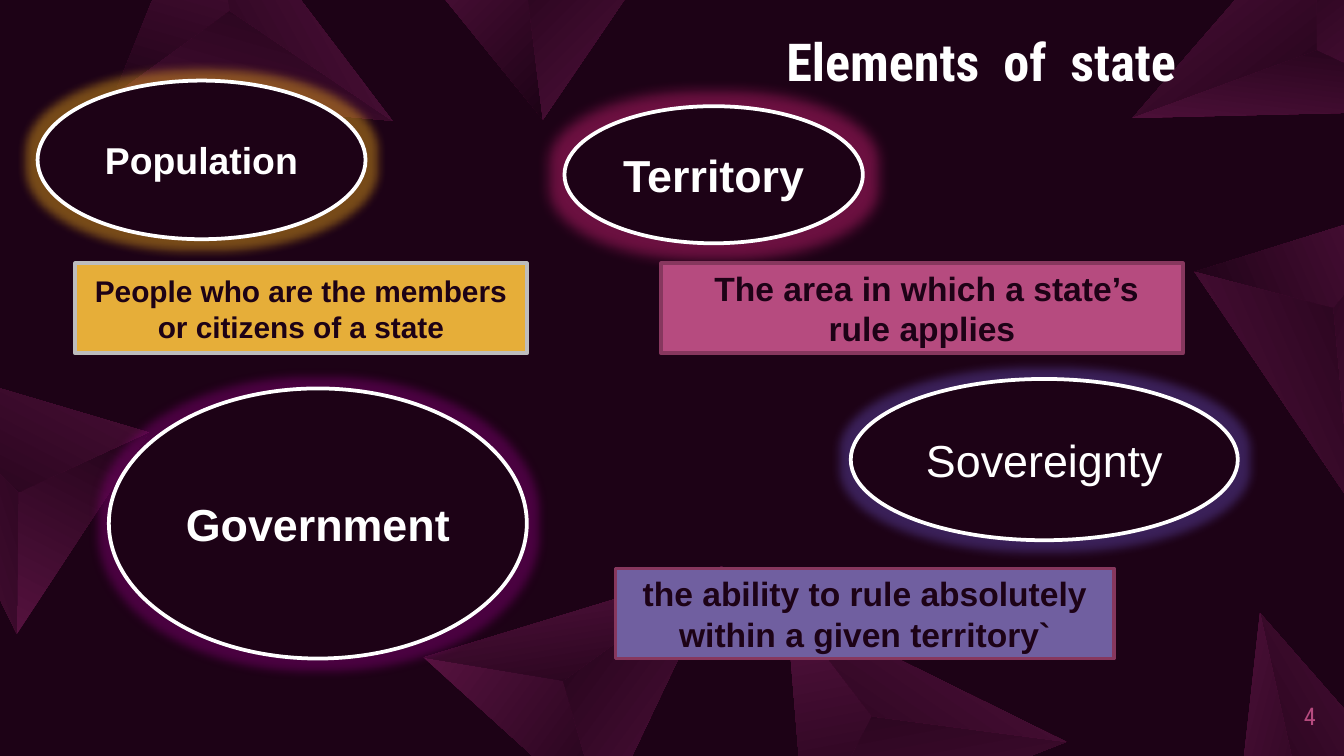
from math import cos, radians, sin

from lxml.etree import SubElement
from pptx import Presentation
from pptx.dml.color import RGBColor
from pptx.enum.shapes import MSO_SHAPE as Preset
from pptx.enum.text import MSO_ANCHOR as Anchor, PP_ALIGN as Align
from pptx.oxml.ns import qn
from pptx.util import Inches, Pt

DARK = RGBColor(0x1D, 0x02, 0x16)
PLUM = RGBColor(0x59, 0x13, 0x41)
WHITE = RGBColor(0xFF, 0xFF, 0xFF)
GOLD = RGBColor(0xE6, 0xAE, 0x39)
SILVER = RGBColor(0xBD, 0xBD, 0xBD)
PINK = RGBColor(0xB6, 0x4B, 0x7F)
WINE = RGBColor(0x87, 0x37, 0x5E)
VIOLET = RGBColor(0x70, 0x5F, 0xA0)
GOLD_GLOW = RGBColor(0xFF, 0xB8, 0x1C)
PINK_GLOW = RGBColor(0xE1, 0x25, 0x7F)
VIOLET_GLOW = RGBColor(0x66, 0x4D, 0xBB)
PURPLE_GLOW = RGBColor(0x8E, 0x00, 0x80)

BODY_FONT = "Arial"
TITLE_FONT = "Roboto Condensed"

CRYSTAL_WIDTH, CRYSTAL_HEIGHT = 2.3, 1.72
LEFT, BOTTOM, RIGHT, MIDDLE = (0, 0.33), (1.13, 1.72), (2.3, 0), (1, 0.66)
FACETS = {
    "left": ((LEFT, BOTTOM, MIDDLE), 315),
    "right": ((BOTTOM, RIGHT, MIDDLE), 135),
    "top": ((LEFT, MIDDLE, RIGHT), 270),
}
CRYSTALS = [
    (9.92, 5.89, 284.5, ("right", "top")),
    (4.06, 0.03, 0, ("left", "right")),
    (9.67, 0.16, 186.8, FACETS),
    (9.68, 2.36, 111.7, FACETS),
    (4.37, 5.24, 351.2, FACETS),
    (0.28, 3.46, 252.3, FACETS),
    (1.61, 0.31, 61, FACETS),
    (6.5, 5.58, 34.4, FACETS),
]
ELLIPSES = [
    ("Population", (0.28, 0.6, 2.44, 1.18), 20, True, GOLD_GLOW, 10),
    ("Territory", (4.2, 0.79, 2.22, 1.02), 24, True, PINK_GLOW, 14),
    ("Sovereignty", (6.33, 2.82, 2.88, 1.2), 24, False, VIOLET_GLOW, 10),
    ("Government", (0.81, 2.89, 3.11, 2.01), 24, True, PURPLE_GLOW, 10),
]
DEFINITIONS = [
    ("People who are the members or citizens of a state",
     (0.56, 1.96, 3.36, 0.67), 16, GOLD, SILVER),
    (" The area in which a state’s rule applies",
     (4.92, 1.96, 3.88, 0.67), 18, PINK, WINE),
    ("the ability to rule absolutely within a given territory`",
     (4.58, 4.23, 3.71, 0.67), 18, VIOLET, WINE),
]


def place(shape, box):
    """Move and size a shape to a box given in inches."""
    shape.left, shape.top, shape.width, shape.height = map(Inches, box)


def write(shape, text, size, color, font=BODY_FONT, bold=False,
          align=Align.CENTER, anchor=Anchor.MIDDLE):
    """Write one formatted paragraph and return it."""
    frame = shape.text_frame
    frame.word_wrap = True
    frame.vertical_anchor = anchor
    paragraph = frame.paragraphs[0]
    paragraph.text = text
    paragraph.alignment = align
    paragraph.font.name = font
    paragraph.font.size = Pt(size)
    paragraph.font.bold = bold
    paragraph.font.color.rgb = color
    return paragraph


def clear_insets(frame):
    """Remove the inner margins of a text frame."""
    frame.margin_left = frame.margin_right = 0
    frame.margin_top = frame.margin_bottom = 0


def add_crystal(slide, center_x, center_y, rotation, facet_names):
    """Draw the facets of a crystal turned about its centre."""
    turn = radians(rotation)
    for name in facet_names:
        corners, gradient_angle = FACETS[name]
        points = [(Inches(x), Inches(y)) for x, y in corners]
        builder = slide.shapes.build_freeform(*points[0])
        builder.add_line_segments(points[1:], close=True)
        facet = builder.convert_to_shape()
        facet.shadow.inherit = False
        offset_x = (facet.left + facet.width / 2) / Inches(1) - CRYSTAL_WIDTH / 2
        offset_y = (facet.top + facet.height / 2) / Inches(1) - CRYSTAL_HEIGHT / 2
        middle_x = center_x + offset_x * cos(turn) - offset_y * sin(turn)
        middle_y = center_y + offset_x * sin(turn) + offset_y * cos(turn)
        facet.left = Inches(middle_x) - facet.width // 2
        facet.top = Inches(middle_y) - facet.height // 2
        facet.rotation = rotation
        facet.line.fill.background()
        facet.fill.gradient()
        facet.fill.gradient_angle = gradient_angle
        for stop, color in zip(facet.fill.gradient_stops, (PLUM, DARK)):
            stop.color.rgb = color


def add_label(slide, preset, text, box, size, bold, fill, line, color):
    """Add an outlined shape with centred text."""
    shape = slide.shapes.add_shape(preset, *map(Inches, box))
    shape.shadow.inherit = False
    shape.fill.solid()
    shape.fill.fore_color.rgb = fill
    shape.line.color.rgb = line
    shape.line.width = Pt(2)
    write(shape, text, size, color, bold=bold)
    return shape


def add_glow(shape, color, radius):
    """Give a shape a soft glow with a radius in points."""
    effects = shape.element.spPr.find(qn("a:effectLst"))
    glow = SubElement(effects, qn("a:glow"), rad=str(Pt(radius)))
    tint = SubElement(glow, qn("a:srgbClr"), val=str(color))
    SubElement(tint, qn("a:alpha"), val="40000")


def add_title(slide, box):
    """Format the title and bring it in front of the crystals."""
    title = slide.shapes.title
    slide.shapes.element.append(title.element)
    place(title, box)
    clear_insets(title.text_frame)
    paragraph = write(title, "Elements  of  state", 28, WHITE, TITLE_FONT,
                      bold=True, anchor=Anchor.TOP)
    paragraph.space_before = Pt(3.6)


def add_page_number(slide, box):
    """Add the page number."""
    number = slide.shapes.add_textbox(*map(Inches, box))
    clear_insets(number.text_frame)
    write(number, "4", 13, PINK, TITLE_FONT, align=Align.RIGHT)


def main():
    """Build and save the presentation."""
    presentation = Presentation()
    presentation.slide_width = Inches(10)
    presentation.slide_height = presentation.slide_width * 9 // 16
    slide = presentation.slides.add_slide(presentation.slide_layouts[5])
    slide.background.fill.solid()
    slide.background.fill.fore_color.rgb = DARK
    for crystal in CRYSTALS:
        add_crystal(slide, *crystal)
    add_title(slide, (2.8, 0.22, 9, 0.57))
    add_page_number(slide, (9.35, 5.11, 0.44, 0.43))
    for text, box, size, bold, glow_color, radius in ELLIPSES:
        ellipse = add_label(slide, Preset.OVAL, text, box, size, bold,
                            DARK, WHITE, WHITE)
        add_glow(ellipse, glow_color, radius)
    for text, box, size, fill, line in DEFINITIONS:
        add_label(slide, Preset.RECTANGLE, text, box, size, True,
                  fill, line, DARK)
    presentation.save("out.pptx")


if __name__ == "__main__":
    main()
